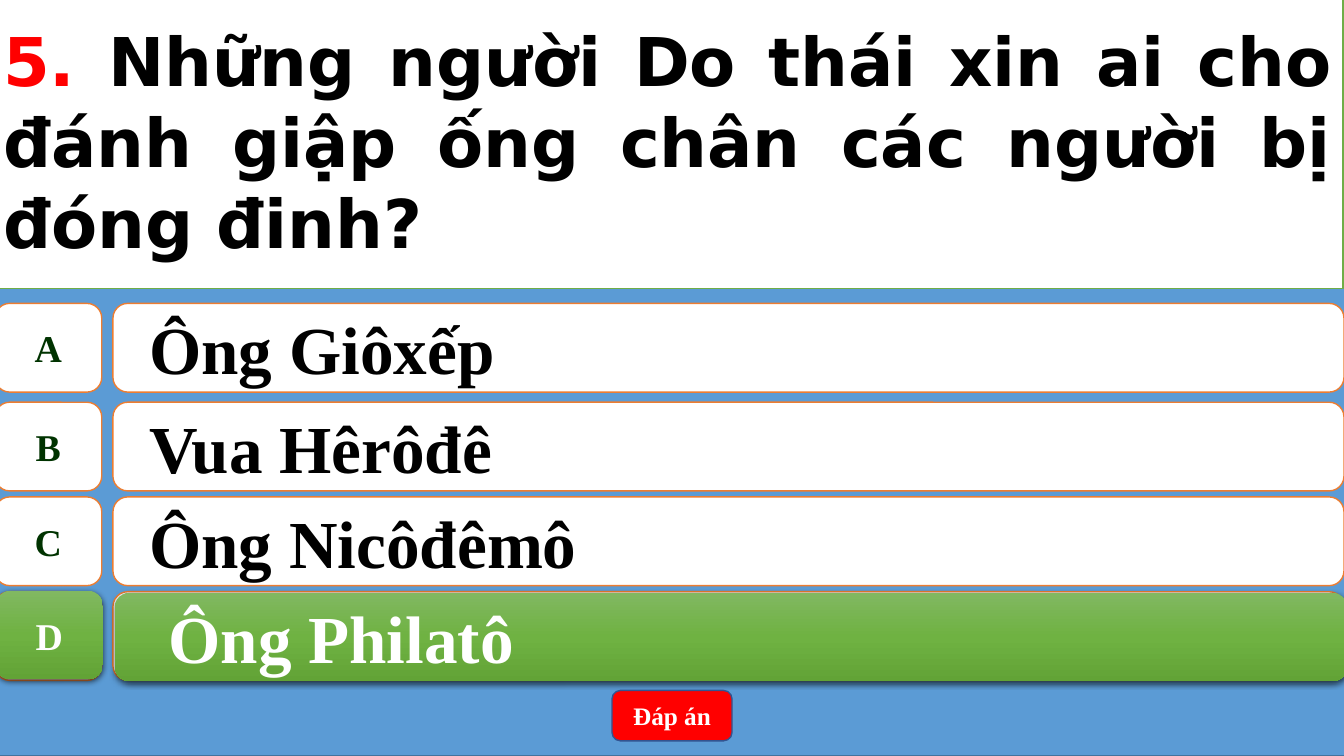
from lxml.etree import SubElement
from pptx import Presentation
from pptx.dml.color import RGBColor
from pptx.enum.shapes import MSO_SHAPE
from pptx.enum.text import MSO_ANCHOR, MSO_AUTO_SIZE, PP_ALIGN
from pptx.oxml.ns import qn
from pptx.util import Emu, Pt

PX = 9144  # one px is a hundredth of an inch
SERIF = "Times New Roman"
GREEN_STOPS = [(0, "81B861"), (50, "6FB242"), (100, "62A336")]
ANSWERS = [("A", "Ông Giôxếp", 301), ("B", "Vua Hêrôđê", 399), ("C", "Ông Nicôđêmô", 493)]
CORRECT_TOP = 587
ROW_LEFT, ROW_WIDTH, ROW_HEIGHT = -5, 1338, 88
LETTER_WIDTH, ANSWER_OFFSET = 106, 117


def px(length):
    return Emu(length * PX)


def color(hex_string):
    return RGBColor.from_string(hex_string)


def style(shape, fill, line):
    shape.fill.solid()
    shape.fill.fore_color.rgb = color(fill)
    shape.line.color.rgb = color(line)
    shape.line.width = Pt(1)


def add_box(shapes, kind, box, fill, line):
    shape = shapes.add_shape(kind, *map(px, box))
    shape.shadow.inherit = False
    style(shape, fill, line)
    return shape


def add_run(paragraph, text, size, font, hex_string):
    run = paragraph.add_run()
    run.text = text
    run.font.size = Pt(size)
    run.font.name = font
    run.font.bold = True
    run.font.color.rgb = color(hex_string)


def write(shape, text, size, hex_string, alignment=PP_ALIGN.CENTER, wrap=True):
    frame = shape.text_frame
    frame.word_wrap = wrap
    frame.vertical_anchor = MSO_ANCHOR.MIDDLE
    paragraph = frame.paragraphs[0]
    paragraph.alignment = alignment
    add_run(paragraph, text, size, SERIF, hex_string)
    return paragraph


def indent(paragraph, margin, first_line):
    properties = paragraph._p.get_or_add_pPr()
    properties.set("marL", str(px(margin)))
    properties.set("indent", str(px(first_line)))


def highlight(shape):
    """Green gradient, no outline, soft shadow below."""
    shape.line.fill.background()
    shape.fill.gradient()
    shape.fill.gradient_angle = 270
    stops = shape.element.spPr.find(".//" + qn("a:gsLst"))
    for stop in list(stops):
        stops.remove(stop)
    for position, hex_string in GREEN_STOPS:
        stop = SubElement(stops, qn("a:gs"), pos=str(position * 1000))
        SubElement(stop, qn("a:srgbClr"), val=hex_string)
    effects = shape.element.spPr.find(qn("a:effectLst"))
    shadow = SubElement(effects, qn("a:outerShdw"), blurRad=str(Pt(4.5)), dist=str(Pt(1.5)),
                        dir="5400000", algn="ctr", rotWithShape="0")
    shadow_color = SubElement(shadow, qn("a:srgbClr"), val="000000")
    SubElement(shadow_color, qn("a:alpha"), val="63000")


def add_row(slide, box):
    """Letter plate and answer plate, grouped."""
    left, top, width, height = box
    shapes = slide.shapes.add_group_shape().shapes
    letter_plate = add_box(shapes, MSO_SHAPE.FLOWCHART_ALTERNATE_PROCESS,
                           (left, top, LETTER_WIDTH, height), "FFFFFF", "ED7D31")
    answer_plate = add_box(shapes, MSO_SHAPE.ROUNDED_RECTANGLE,
                           (left + ANSWER_OFFSET, top, width - ANSWER_OFFSET, height),
                           "FFFFFF", "ED7D31")
    return letter_plate, answer_plate


def fill_row(plates, letter, answer, letter_color, answer_color, margin=50):
    letter_plate, answer_plate = plates
    write(letter_plate, letter, 27, letter_color, wrap=False)
    paragraph = write(answer_plate, answer, 48, answer_color, PP_ALIGN.LEFT)
    indent(paragraph, margin, -28)


def add_answers(slide):
    for letter, answer, top in ANSWERS:
        plates = add_row(slide, (ROW_LEFT, top, ROW_WIDTH, ROW_HEIGHT))
        fill_row(plates, letter, answer, "003300", "000000")
    # The correct answer lies just off its white plate, whose rim shows
    add_row(slide, (ROW_LEFT, CORRECT_TOP, ROW_WIDTH, ROW_HEIGHT))
    plates = add_row(slide, (ROW_LEFT + 1, CORRECT_TOP, ROW_WIDTH + 1, ROW_HEIGHT))
    for plate in plates:
        highlight(plate)
    plates[0].top -= px(1)
    plates[1].top += px(1)
    plates[1].left += px(1)
    fill_row(plates, "D", "Ông Philatô", "FFFFFF", "FFFFFF", margin=67)


def add_button(slide, box):
    button = add_box(slide.shapes, MSO_SHAPE.ROUNDED_RECTANGLE, box, "FF0000", "325491")
    write(button, "Đáp án", 18, "FFFFFF")


def place_question(slide, box):
    title = slide.shapes.title
    title.left, title.top, title.width, title.height = map(px, box)
    style(title, "FFFFFF", "70AD47")
    frame = title.text_frame
    frame.word_wrap = True
    frame.auto_size = MSO_AUTO_SIZE.NONE
    frame.vertical_anchor = MSO_ANCHOR.MIDDLE
    paragraph = frame.paragraphs[0]
    paragraph.alignment = PP_ALIGN.JUSTIFY
    add_run(paragraph, "5. ", 48, "DejaVu Sans", "FF0000")
    add_run(paragraph, "Những người Do thái xin ai cho đánh giập ống chân các người bị đóng đinh?",
            48, "DejaVu Sans", "000000")
    # Bring the question in front of the blue backdrop
    title.element.getparent().append(title.element)


def main():
    presentation = Presentation()
    presentation.slide_width, presentation.slide_height = px(1333), px(750)
    slide = presentation.slides.add_slide(presentation.slide_layouts[5])
    add_box(slide.shapes, MSO_SHAPE.RECTANGLE, (-5, 0, 1339, 750), "5B9BD5", "43739E")
    add_answers(slide)
    add_button(slide, (607, 685, 119, 50))
    place_question(slide, (-7, -7, 1339, 293))
    presentation.save("out.pptx")


if __name__ == "__main__":
    main()
